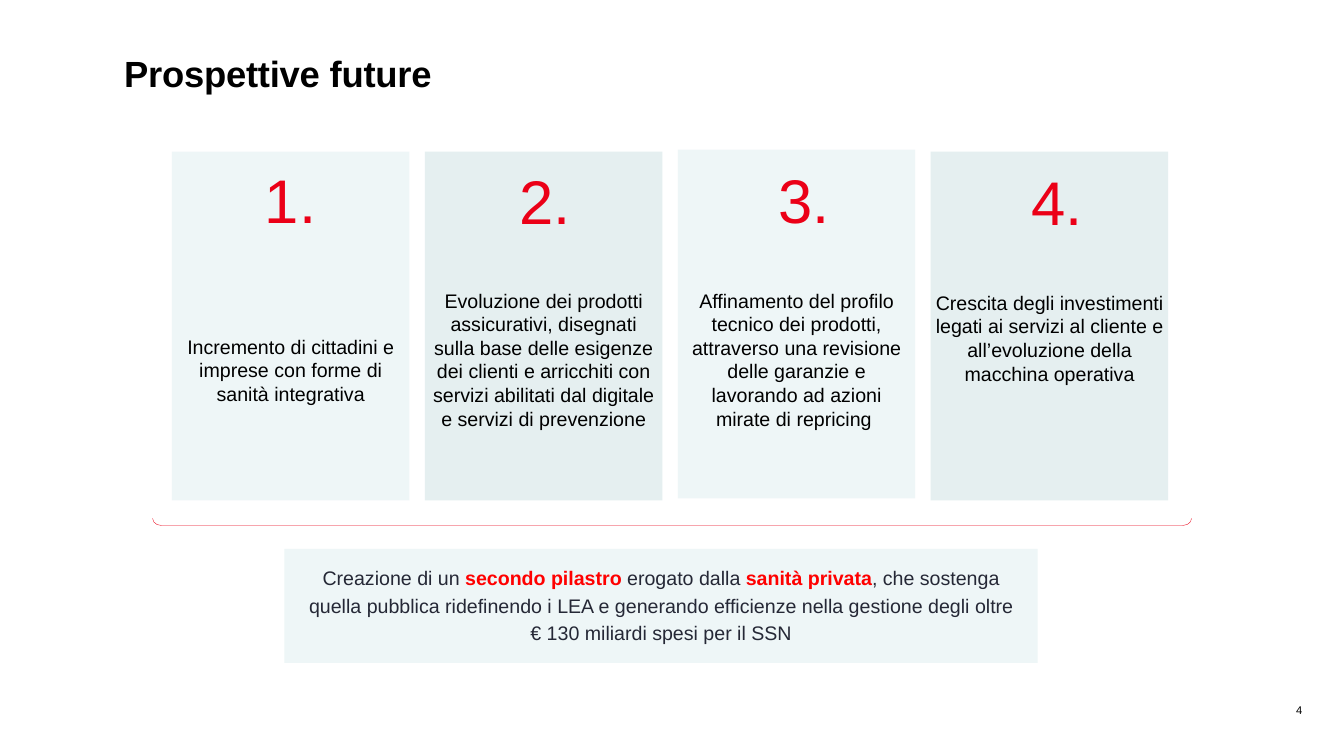
from dataclasses import dataclass
from typing import NamedTuple

from pptx import Presentation
from pptx.dml.color import RGBColor
from pptx.enum.shapes import MSO_SHAPE as Preset
from pptx.enum.text import MSO_ANCHOR as Anchor, MSO_AUTO_SIZE as AutoSize, PP_ALIGN as Align
from pptx.shapes.autoshape import Shape
from pptx.slide import Slide
from pptx.text.text import TextFrame
from pptx.util import Inches, Pt

SLIDE_WIDTH = Inches(26.66)
SLIDE_HEIGHT = Inches(15)


@dataclass(frozen=True)
class Theme:
    font: str = "Arial"
    black: str = "000000"
    ink: str = "252836"
    brand_red: str = "EB0017"
    accent_red: str = "FF0000"
    pale: str = "EEF6F7"
    mist: str = "E5EFF0"
    title_size: int = 52
    number_size: int = 88
    body_size: int = 28
    page_size: int = 16
    spacing: float = 1.17
    space_after: int = 10


THEME = Theme()


class Area(NamedTuple):
    """Position and size in percent of the slide."""
    left: float
    top: float
    width: float
    height: float

    def emu(self) -> tuple[int, int, int, int]:
        return (across(self.left), down(self.top), across(self.width), down(self.height))


class Span(NamedTuple):
    text: str
    color: str
    bold: bool = False


@dataclass(frozen=True)
class Card:
    text: str
    fill: str
    text_drop: float
    number_shift: float
    number_top: float
    top: float = 20.07


CARD_LEFT, CARD_PITCH, CARD_WIDTH, CARD_HEIGHT = 12.79, 18.82, 17.67, 46.13
NUMBER_WIDTH, NUMBER_HEIGHT = 13.5, 9.53

CARDS = [
    Card("Incremento di cittadini e imprese con forme di sanità integrativa",
         THEME.pale, 24.2, 0, 19.8),
    Card("Evoluzione dei prodotti assicurativi, disegnati sulla base delle esigenze dei clienti "
         "e arricchiti con servizi abilitati dal digitale e servizi di prevenzione",
         THEME.mist, 18.13, 0.13, 19.87),
    Card("Affinamento del profilo tecnico dei prodotti, attraverso una revisione delle garanzie "
         "e lavorando ad azioni mirate di repricing ",
         THEME.pale, 18.4, 0.56, 19.8, top=19.8),
    Card("Crescita degli investimenti legati ai servizi al cliente e all’evoluzione della "
         "macchina operativa",
         THEME.mist, 18.4, 0.54, 20.07),
]

CONCLUSION = [
    Span("Creazione di un ", THEME.ink),
    Span("secondo pilastro ", THEME.accent_red, True),
    Span("erogato dalla ", THEME.ink),
    Span("sanità privata", THEME.accent_red, True),
    Span(", che sostenga quella pubblica ridefinendo i LEA e generando efficienze nella "
         "gestione degli oltre € 130 miliardi spesi per il SSN", THEME.ink),
]


def across(percent: float) -> int:
    return round(SLIDE_WIDTH * percent / 100)


def down(percent: float) -> int:
    return round(SLIDE_HEIGHT * percent / 100)


def clear_margins(frame: TextFrame) -> None:
    frame.word_wrap = True
    frame.margin_left = frame.margin_right = frame.margin_top = frame.margin_bottom = 0


def write(frame: TextFrame, spans: list[Span], size: int, align: Align,
          spaced: bool = False) -> None:
    para = frame.paragraphs[0]
    para.alignment = align
    if spaced:
        para.line_spacing = THEME.spacing
        para.space_after = Pt(THEME.space_after)
    para.font.name = THEME.font
    para.font.size = Pt(size)
    for span in spans:
        run = para.add_run()
        run.text = span.text
        run.font.bold = span.bold
        run.font.color.rgb = RGBColor.from_string(span.color)


def add_panel(page: Slide, area: Area, color: str) -> Shape:
    panel = page.shapes.add_shape(Preset.RECTANGLE, *area.emu())
    panel.shadow.inherit = False
    panel.fill.solid()
    panel.fill.fore_color.rgb = RGBColor.from_string(color)
    panel.line.fill.background()
    return panel


def add_text(page: Slide, area: Area, spans: list[Span], size: int,
             align: Align = Align.CENTER, spaced: bool = True) -> TextFrame:
    frame = page.shapes.add_textbox(*area.emu()).text_frame
    clear_margins(frame)
    write(frame, spans, size, align, spaced)
    return frame


def add_title(page: Slide, text: str) -> None:
    title = page.shapes.title
    title.left, title.top, title.width, title.height = Area(9.23, 6.8, 87.66, 5.87).emu()
    frame = title.text_frame
    clear_margins(frame)
    frame.auto_size = AutoSize.NONE
    frame.vertical_anchor = Anchor.TOP
    write(frame, [Span(text, THEME.black, True)], THEME.title_size, Align.LEFT)
    frame.paragraphs[0].runs[0].font._element.set("spc", "-30")


def add_card(page: Slide, index: int, card: Card) -> None:
    left = CARD_LEFT + index * CARD_PITCH
    panel = add_panel(page, Area(left, card.top, CARD_WIDTH, CARD_HEIGHT), card.fill)
    frame = panel.text_frame
    frame.word_wrap = True
    frame.vertical_anchor = Anchor.TOP
    frame.margin_top = down(card.text_drop)
    write(frame, [Span(card.text, THEME.black)], THEME.body_size, Align.CENTER)
    number_left = left + (CARD_WIDTH - NUMBER_WIDTH) / 2 + card.number_shift
    add_text(page, Area(number_left, card.number_top, NUMBER_WIDTH, NUMBER_HEIGHT),
             [Span(f"{index + 1}.", THEME.brand_red)], THEME.number_size)


def add_bracket(page: Slide, area: Area) -> None:
    bracket = page.shapes.add_shape(Preset.RIGHT_BRACKET, *area.emu())
    bracket.shadow.inherit = False
    bracket.rotation = 90
    bracket.adjustments[0] = 1.21
    bracket.fill.background()
    bracket.line.color.rgb = RGBColor.from_string(THEME.brand_red)
    bracket.line.width = Pt(0.5)


def main() -> None:
    deck = Presentation()
    deck.slide_width, deck.slide_height = SLIDE_WIDTH, SLIDE_HEIGHT
    page = deck.slides.add_slide(deck.slide_layouts.get_by_name("Title Only"))
    add_title(page, "Prospettive future")
    for index, card in enumerate(CARDS):
        add_card(page, index, card)
    add_bracket(page, Area(49.74, 0.33, 0.53, 137.4))
    add_panel(page, Area(21.16, 72.6, 56.04, 15.07), THEME.pale)
    add_text(page, Area(22.81, 74.33, 52.74, 13.93), CONCLUSION, THEME.body_size)
    page_number = add_text(page, Area(93.59, 91.27, 3.3, 5.33), [Span("4", THEME.black)],
                           THEME.page_size, Align.RIGHT, spaced=False)
    page_number.vertical_anchor = Anchor.MIDDLE
    deck.save("out.pptx")


if __name__ == "__main__":
    main()
